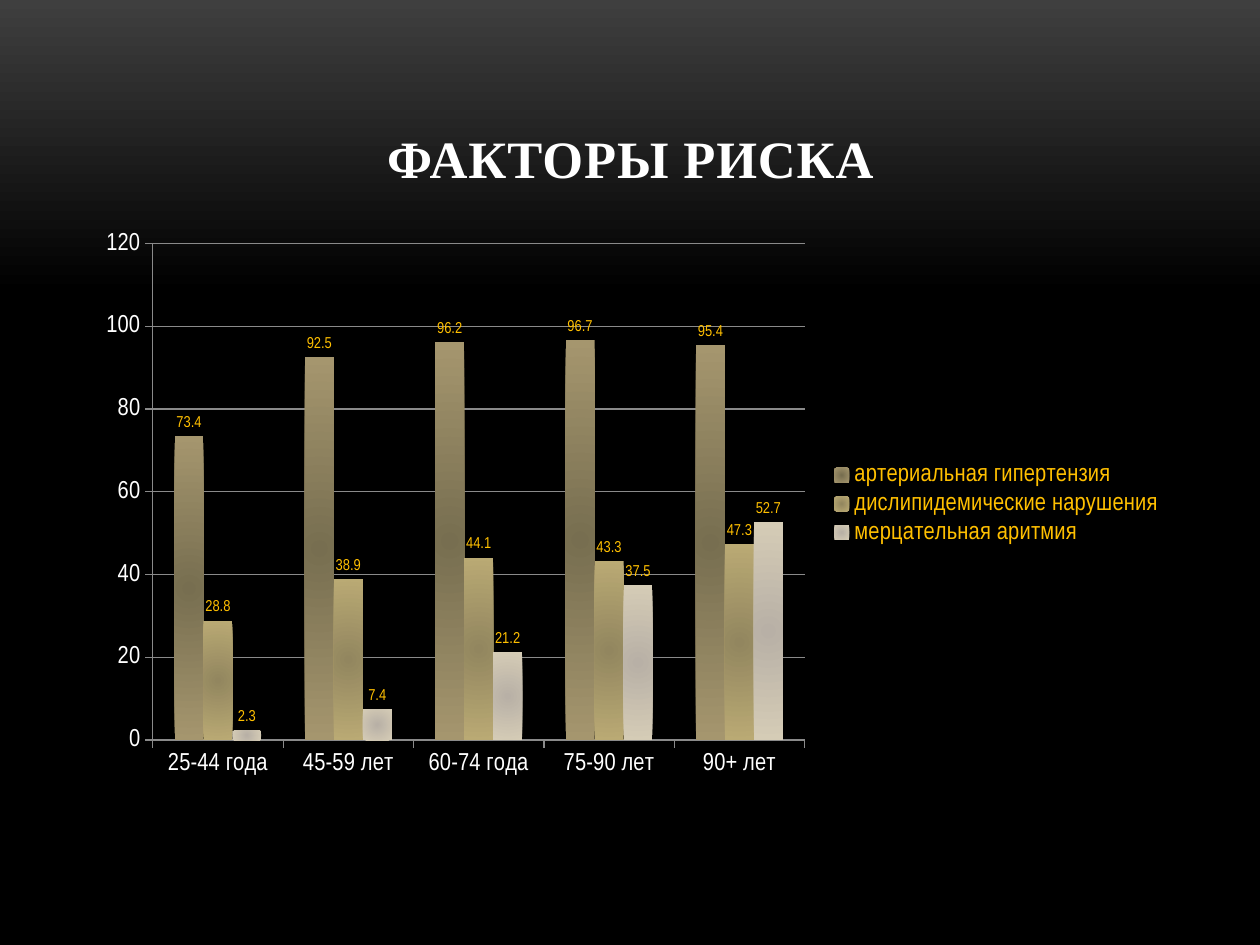
from lxml import etree
from pptx import Presentation
from pptx.chart.data import CategoryChartData
from pptx.dml.color import RGBColor
from pptx.enum.chart import XL_CHART_TYPE, XL_LABEL_POSITION, XL_LEGEND_POSITION, XL_TICK_MARK
from pptx.enum.text import MSO_ANCHOR, PP_ALIGN
from pptx.oxml import parse_xml
from pptx.oxml.ns import nsdecls, qn
from pptx.util import Inches, Pt

COLUMNS = XL_CHART_TYPE.COLUMN_CLUSTERED
LABEL_ABOVE = XL_LABEL_POSITION.OUTSIDE_END
LEGEND_RIGHT = XL_LEGEND_POSITION.RIGHT
TICK_OUTSIDE = XL_TICK_MARK.OUTSIDE
ANCHOR_BOTTOM = MSO_ANCHOR.BOTTOM
CENTER = PP_ALIGN.CENTER

COLORS = {
    "top": "3F3F3F",
    "base": "000000",
    "text": "FFFFFF",
    "accent": "FFC000",
    "axis": "8A8A8A",
}
TITLE = "ФАКТОРЫ РИСКА"
AGE_GROUPS = ["25-44 года", "45-59 лет", "60-74 года", "75-90 лет", "90+ лет"]
# name, values, colour at the centre of a column, colour at its edge
RISK_FACTORS = [
    ("артериальная гипертензия", [73.4, 92.5, 96.2, 96.7, 95.4], "776E50", "A5966E"),
    ("дислипидемические нарушения", [28.8, 38.9, 44.1, 43.3, 47.3], "92865F", "BAAA74"),
    ("мерцательная аритмия", [2.3, 7.4, 21.2, 37.5, 52.7], "B8B0A6", "D5CCB6"),
]
LEFT, WIDTH = Inches(0.67), Inches(8.67)


def set_gradient(fill, first, last, end=1.0):
    fill.gradient()
    for stop, color, position in zip(fill.gradient_stops, (first, last), (0, end)):
        stop.color.rgb = RGBColor.from_string(color)
        stop.position = position


def make_radial(series):
    """Turn the linear gradient of a series into one that spreads from the centre."""
    linear = series._element.find(".//" + qn("a:lin"))
    radial = parse_xml(f'<a:path {nsdecls("a")} path="circle"/>')
    etree.SubElement(radial, qn("a:fillToRect"), l="50000", t="50000", r="50000", b="50000")
    linear.getparent().replace(linear, radial)


def style_font(font, size, color, name="Arial Narrow"):
    font.size = Pt(size)
    font.name = name
    font.color.rgb = RGBColor.from_string(color)


def add_title(slide):
    box = slide.shapes.add_textbox(LEFT, Inches(0.3), WIDTH, Inches(1.25))
    frame = box.text_frame
    frame.word_wrap = True
    frame.vertical_anchor = ANCHOR_BOTTOM
    frame.text = TITLE
    paragraph = frame.paragraphs[0]
    paragraph.alignment = CENTER
    font = paragraph.runs[0].font
    style_font(font, 30, COLORS["text"], "Times New Roman")
    font.bold = True
    font._element.set("spc", "50")


def add_risk_chart(slide):
    data = CategoryChartData()
    data.categories = AGE_GROUPS
    for name, values, _, _ in RISK_FACTORS:
        data.add_series(name, values)
    chart = slide.shapes.add_chart(
        COLUMNS, LEFT, Inches(1.75), WIDTH, Inches(4.5), data
    ).chart
    style_font(chart.font, 14, COLORS["text"])
    chart.has_title = False
    chart.has_legend = True
    chart.legend.position = LEGEND_RIGHT
    chart.legend.include_in_layout = False
    style_font(chart.legend.font, 14, COLORS["accent"])

    axis_color = RGBColor.from_string(COLORS["axis"])
    value_axis = chart.value_axis
    value_axis.minimum_scale, value_axis.maximum_scale = 0, 120
    value_axis.major_unit = 20
    value_axis.has_major_gridlines = True
    for axis in (chart.category_axis, value_axis):
        axis.major_tick_mark = TICK_OUTSIDE
    for part in (chart.category_axis, value_axis, value_axis.major_gridlines):
        part.format.line.color.rgb = axis_color
        part.format.line.width = Pt(0.75)

    plot = chart.plots[0]
    plot.gap_width = 150
    plot.overlap = 0
    plot.vary_by_categories = False
    for series, (_, _, center, edge) in zip(plot.series, RISK_FACTORS):
        set_gradient(series.format.fill, center, edge)
        make_radial(series)
        labels = series.data_labels
        labels.show_value = True
        labels.position = LABEL_ABOVE
        style_font(labels.font, 9, COLORS["accent"])


def main():
    presentation = Presentation()
    presentation.slide_width, presentation.slide_height = Inches(10), Inches(7.5)
    slide = presentation.slides.add_slide(presentation.slide_layouts[6])
    background = slide.background.fill
    set_gradient(background, COLORS["top"], COLORS["base"], 0.31)
    background.gradient_angle = 270
    add_title(slide)
    add_risk_chart(slide)
    presentation.save("out.pptx")


if __name__ == "__main__":
    main()
